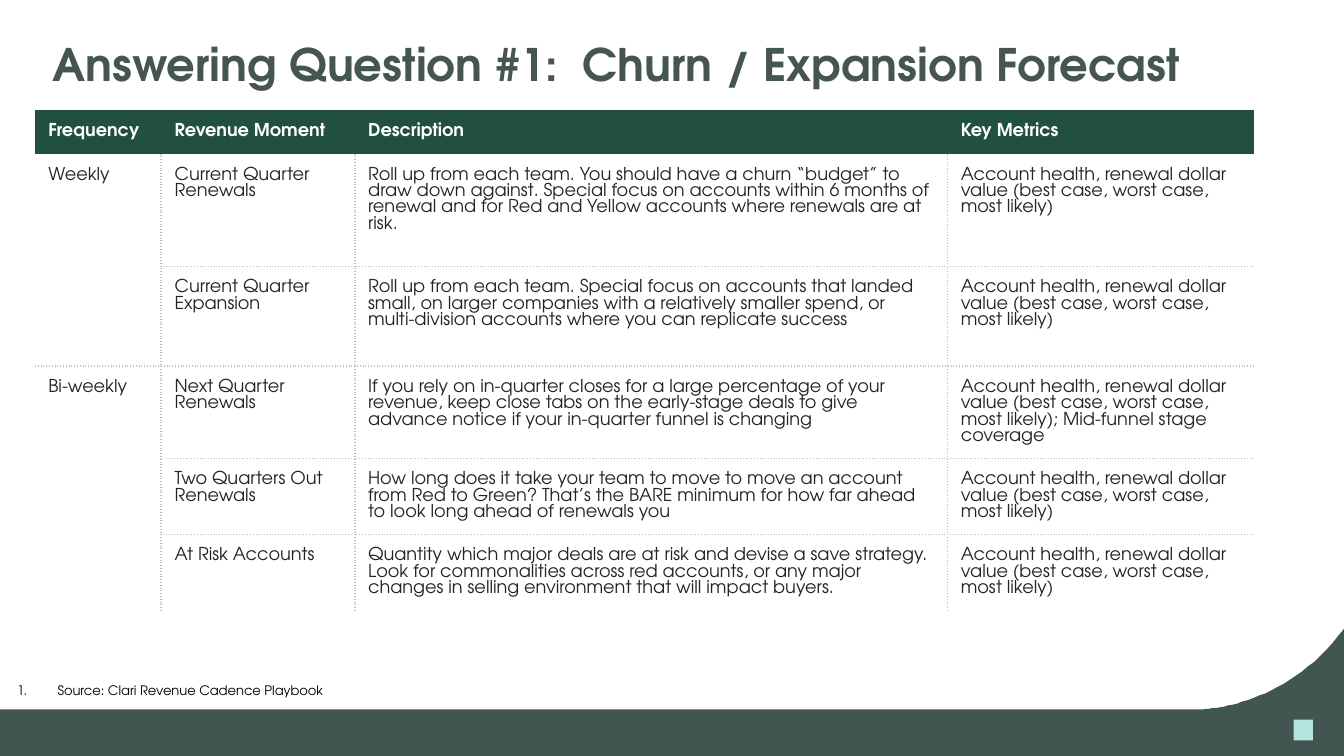
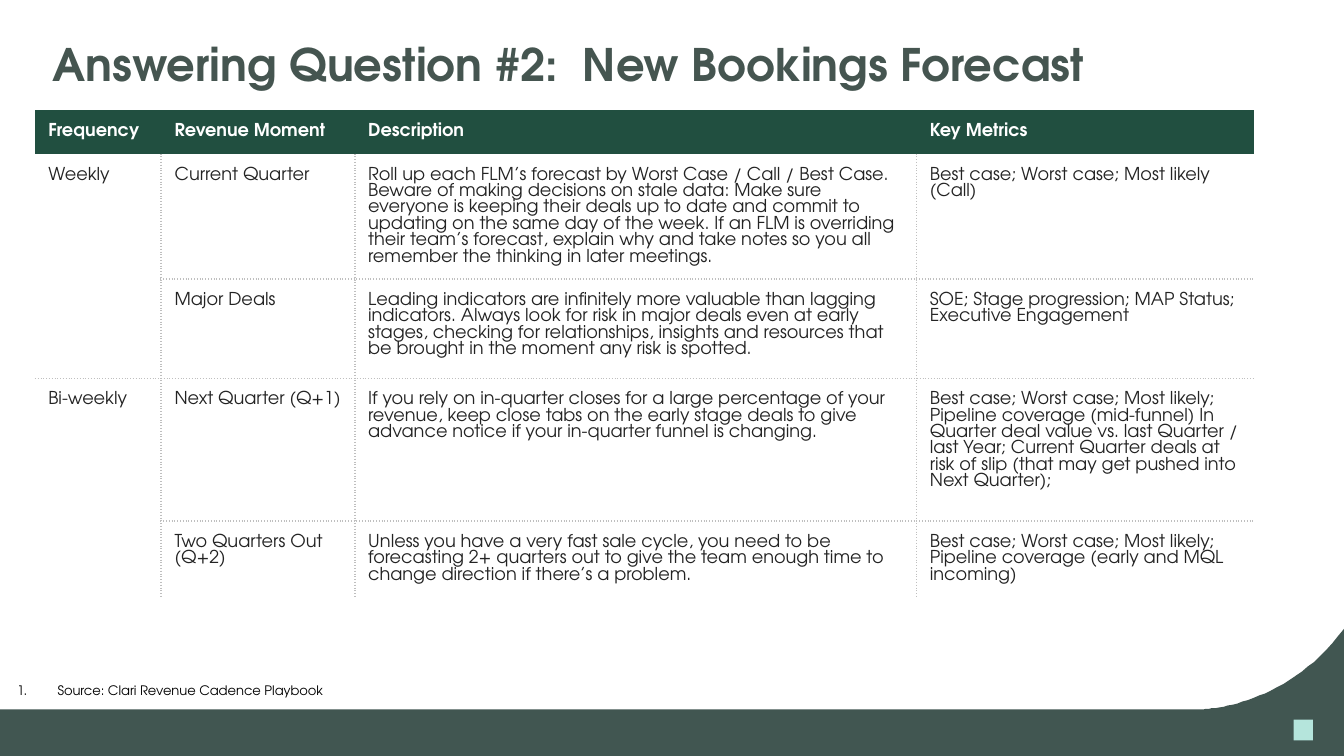
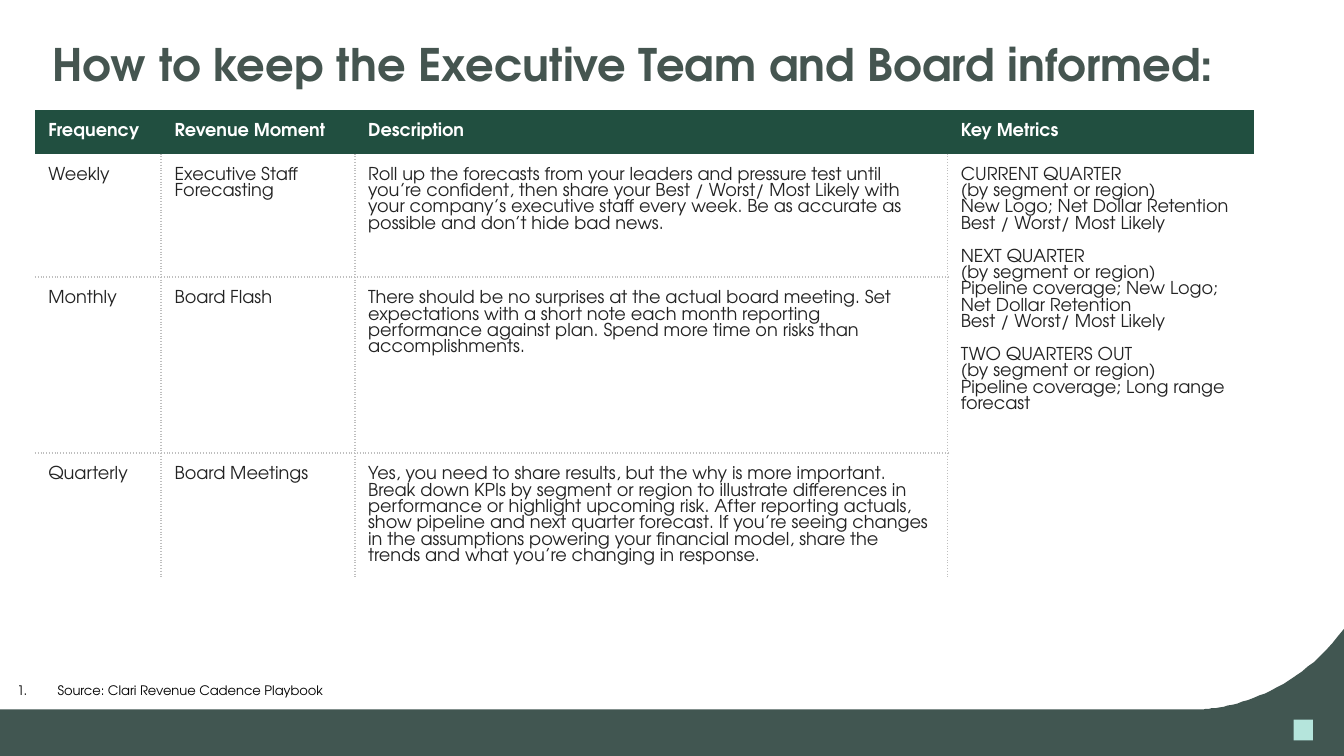
from lxml import etree
from pptx import Presentation, util as u
from pptx.dml.color import RGBColor
from pptx.enum import shapes, text
from pptx.oxml.ns import qn

SCALE = 4572  # EMU in a px, 200 px to the inch
FONT = "TeX Gyre Adventor"
WHITE = RGBColor(0xFF, 0xFF, 0xFF)
BLACK = RGBColor(0, 0, 0)
INK = RGBColor(0x23, 0x23, 0x23)
SLATE = RGBColor(0x45, 0x55, 0x50)
BAND = RGBColor(0x41, 0x56, 0x51)
PINE = RGBColor(0x21, 0x4F, 0x40)
MINT = RGBColor(0xB5, 0xE5, 0xDC)
GREY = RGBColor(0xBF, 0xBF, 0xBF)
PLAIN_GRID = "{2D5ABB26-0587-4C30-8999-92F81FD0307C}"

TITLE = dict(name=FONT, size=u.Pt(24), bold=True)
HEAD = dict(name=FONT, size=u.Pt(9.5), bold=True)
BODY = dict(name=FONT, size=u.Pt(9.5), bold=False)
NOTE = dict(name=FONT, size=u.Pt(7))
SIDES = ("left", "right", "top", "bottom")

HEADS = ("Frequency", "Revenue Moment", "Description", "Key Metrics")
SOURCE = "Source: Clari Revenue Cadence Playbook"
HEALTH = "Account health, renewal dollar value (best case, worst case, most likely)"
WIDE = (188, 288, 882, 456)
SLIM = (188, 288, 836, 502)

# A cell of None joins the cell above it; an empty line opens a new group.
PAGES = [
    ("Answering Question #1:  Churn / Expansion Forecast", WIDE, (56, 168, 148, 136, 108, 108), [
        ("Weekly", "Current Quarter Renewals",
         "Roll up from each team. You should have a churn “budget” to draw down against. Special focus on "
         "accounts within 6 months of renewal and for Red and Yellow accounts where renewals are at risk.",
         HEALTH),
        (None, "Current Quarter Expansion",
         "Roll up from each team. Special focus on accounts that landed small, on larger companies with a "
         "relatively smaller spend, or multi-division accounts where you can replicate success",
         HEALTH),
        ("Bi-weekly", "Next Quarter Renewals",
         "If you rely on in-quarter closes for a large percentage of your revenue, keep close tabs on the "
         "early-stage deals to give advance notice if your in-quarter funnel is changing",
         HEALTH + "; Mid-funnel stage coverage"),
        (None, "Two Quarters Out Renewals",
         "How long does it take your team to move to move an account from Red to Green? That’s the BARE "
         "minimum for how far ahead to look long ahead of renewals you",
         HEALTH),
        (None, "At Risk Accounts",
         "Quantity which major deals are at risk and devise a save strategy. Look for commonalities across "
         "red accounts, or any major changes in selling environment that will impact buyers.",
         HEALTH),
    ]),
    ("Answering Question #2:  New Bookings Forecast", SLIM, (56, 168, 148, 212, 108), [
        ("Weekly", "Current Quarter",
         "Roll up each FLM’s forecast by Worst Case / Call / Best Case. Beware of making decisions on stale "
         "data: Make sure everyone is keeping their deals up to date and commit to updating on the same day "
         "of the week. If an FLM is overriding their team’s forecast, explain why and take notes so you all "
         "remember the thinking in later meetings.",
         "Best case; Worst case; Most likely (Call)"),
        (None, "Major Deals",
         "Leading indicators are infinitely more valuable than lagging indicators. Always look for risk in "
         "major deals even at early stages, checking for relationships, insights and resources that be "
         "brought in the moment any risk is spotted.",
         "SOE; Stage progression; MAP Status; Executive Engagement"),
        ("Bi-weekly", "Next Quarter (Q+1)",
         "If you rely on in-quarter closes for a large percentage of your revenue, keep close tabs on the "
         "early stage deals to give advance notice if your in-quarter funnel is changing.",
         "Best case; Worst case; Most likely; Pipeline coverage (mid-funnel) In Quarter deal value vs. last "
         "Quarter / last Year; Current Quarter deals at risk of slip (that may get pushed into Next Quarter);"),
        (None, "Two Quarters Out (Q+2)",
         "Unless you have a very fast sale cycle, you need to be forecasting 2+ quarters out to give the "
         "team enough time to change direction if there’s a problem.",
         "Best case; Worst case; Most likely; Pipeline coverage (early and MQL incoming)"),
    ]),
    ("How to keep the Executive Team and Board informed:", WIDE, (56, 184, 262, 108), [
        ("Weekly", "Executive Staff Forecasting",
         "Roll up the forecasts from your leaders and pressure test until you’re confident, then share your "
         "Best / Worst/ Most Likely with your company’s executive staff every week. Be as accurate as "
         "possible and don’t hide bad news.",
         "CURRENT QUARTER\n(by segment or region)\n"
         "New Logo; Net Dollar Retention Best / Worst/ Most Likely\n\n"
         "NEXT QUARTER\n(by segment or region)\n"
         "Pipeline coverage; New Logo; Net Dollar Retention\nBest / Worst/ Most Likely\n\n"
         "TWO QUARTERS OUT\n(by segment or region)\nPipeline coverage; Long range forecast"),
        ("Monthly", "Board Flash",
         "There should be no surprises at the actual board meeting. Set expectations with a short note each "
         "month reporting performance against plan. Spend more time on risks than accomplishments.",
         None),
        ("Quarterly", "Board Meetings",
         "Yes, you need to share results, but the why is more important. Break down KPIs by segment or "
         "region to illustrate differences in performance or highlight upcoming risk. After reporting "
         "actuals, show pipeline and next quarter forecast. If you’re seeing changes in the assumptions "
         "powering your financial model, share the trends and what you’re changing in response.",
         None),
    ]),
]


def px(*vals):
    return [u.Emu(v * SCALE) for v in vals]


def put(item, **vals):
    for name, val in vals.items():
        setattr(item, name, val)


def inset(item, *vals):
    put(item, **{f"margin_{side}": v for side, v in zip(SIDES, px(*vals))})


def node(parent, tag, **vals):
    return etree.SubElement(parent, qn(tag), {k: str(v) for k, v in vals.items()})


def curve(a, b, c, d, steps=32):
    """Points of a cubic Bezier, without its start."""
    for t in (i / steps for i in range(1, steps + 1)):
        s = 1 - t
        yield tuple(s**3 * p + 3 * s * s * t * q + 3 * s * t * t * r + t**3 * w
                    for p, q, r, w in zip(a, b, c, d))


class Deck:
    def __init__(self):
        self.prs = Presentation()
        self.prs.slide_width, self.prs.slide_height = px(2000, 1125)
        self.base = self.prs.slide_layouts[5]
        self.slide = None

    def page(self):
        self.slide = self.prs.slides.add_slide(self.base)

    def share(self, shape, color):
        """Paint a shape and move it to the layout."""
        shape.shadow.inherit = False
        shape.fill.solid()
        shape.fill.fore_color.rgb = color
        shape.line.fill.background()
        self.base.shapes.element.append(shape.element)

    def band(self):
        pen = self.slide.shapes.build_freeform(2000, 1125, scale=SCALE)
        bend = curve((1782, 1056), (1782, 1056), (1910, 1058), (2000, 936))
        pen.add_line_segments([(0, 1125), (0, 1056), (1782, 1056), *bend])
        self.share(pen.convert_to_shape(), BAND)
        mark = self.slide.shapes.add_shape(shapes.MSO_SHAPE.RECTANGLE, *px(1925, 1071, 29, 31))
        self.share(mark, MINT)

    def say(self, para, words, style, color):
        """Add a styled run to a paragraph."""
        run = para.add_run()
        run.text = words
        put(run.font, **style)
        run.font.color.rgb = color

    def title(self, words):
        box = self.slide.shapes.title
        put(box, **dict(zip(("left", "top", "width", "height"), px(68, 14, 1864, 126))))
        frame = box.text_frame
        put(frame, auto_size=text.MSO_AUTO_SIZE.NONE, word_wrap=True,
            vertical_anchor=text.MSO_ANCHOR.BOTTOM)
        inset(frame, 10, 10, 5, 5)
        para = frame.paragraphs[0]
        put(para, alignment=text.PP_ALIGN.LEFT, line_spacing=0.9)
        self.say(para, words, TITLE, SLATE)

    def fill(self, cell, words, style, color):
        """Set the text of a cell, with a gap ahead of each later group."""
        inset(cell, 20, 20, 20, 20)
        frame = cell.text_frame
        para = frame.paragraphs[0]
        for g, group in enumerate(words.split("\n\n")):
            for n, line in enumerate(group.split("\n")):
                if g or n:
                    para = frame.add_paragraph()
                if g and not n:
                    para.space_before = u.Pt(8.8)
                self.say(para, line, style, color)

    def rule(self, cell, sides):
        """Draw dotted borders on the given sides, L R T B in this order."""
        props = cell._tc.get_or_add_tcPr()
        for spot, side in enumerate(sides):
            line = node(props, f"a:ln{side}", w=int(u.Pt(1)))
            node(node(line, "a:solidFill"), "a:srgbClr", val=GREY)
            node(line, "a:prstDash", val="dot")
            props.insert(spot, line)

    def table(self, cols, highs, rows):
        frame = self.slide.shapes.add_table(
            len(highs), len(cols), *px(52, 164, sum(cols), sum(highs)))
        frame.element.xpath(".//a:tableStyleId")[0].text = PLAIN_GRID
        grid = frame.table
        put(grid, first_row=False, horz_banding=False)
        for col, wide in zip(grid.columns, px(*cols)):
            col.width = wide
        for row, high in zip(grid.rows, px(*highs)):
            row.height = high
        for c, head in enumerate(HEADS):
            cell = grid.cell(0, c)
            self.fill(cell, head, HEAD, WHITE)
            cell.fill.solid()
            cell.fill.fore_color.rgb = PINE
            column = [row[c] for row in rows] + [""]
            for r, words in enumerate(column[:-1], 1):
                if words is None:
                    continue
                end = r
                while column[end] is None:
                    end += 1
                cell = grid.cell(r, c)
                if end > r:
                    cell.merge(grid.cell(end, c))
                self.fill(cell, words, BODY, INK)
                cell.fill.background()
                edges = (("L", c > 0), ("R", c < len(cols) - 1),
                         ("T", r > 1), ("B", end < len(rows)))
                self.rule(cell, [side for side, shown in edges if shown])

    def note(self, words):
        frame = self.slide.shapes.add_textbox(*px(-34, 1004, 1064, 64)).text_frame
        put(frame, word_wrap=True, auto_size=text.MSO_AUTO_SIZE.SHAPE_TO_FIT_TEXT)
        inset(frame, 20, 20, 20, 20)
        para = frame.paragraphs[0]
        props = para._p.get_or_add_pPr()
        for name, val in zip(("marL", "indent"), px(100, -60)):
            props.set(name, str(int(val)))
        node(node(props, "a:buClr"), "a:srgbClr", val=BLACK)
        node(props, "a:buAutoNum", type="arabicPeriod")
        self.say(para, words, NOTE, BLACK)


def main():
    deck = Deck()
    for n, (title, cols, highs, rows) in enumerate(PAGES):
        deck.page()
        if n == 0:
            deck.band()
        deck.title(title)
        deck.table(cols, highs, rows)
        deck.note(SOURCE)
    deck.prs.save("out.pptx")


if __name__ == "__main__":
    main()
